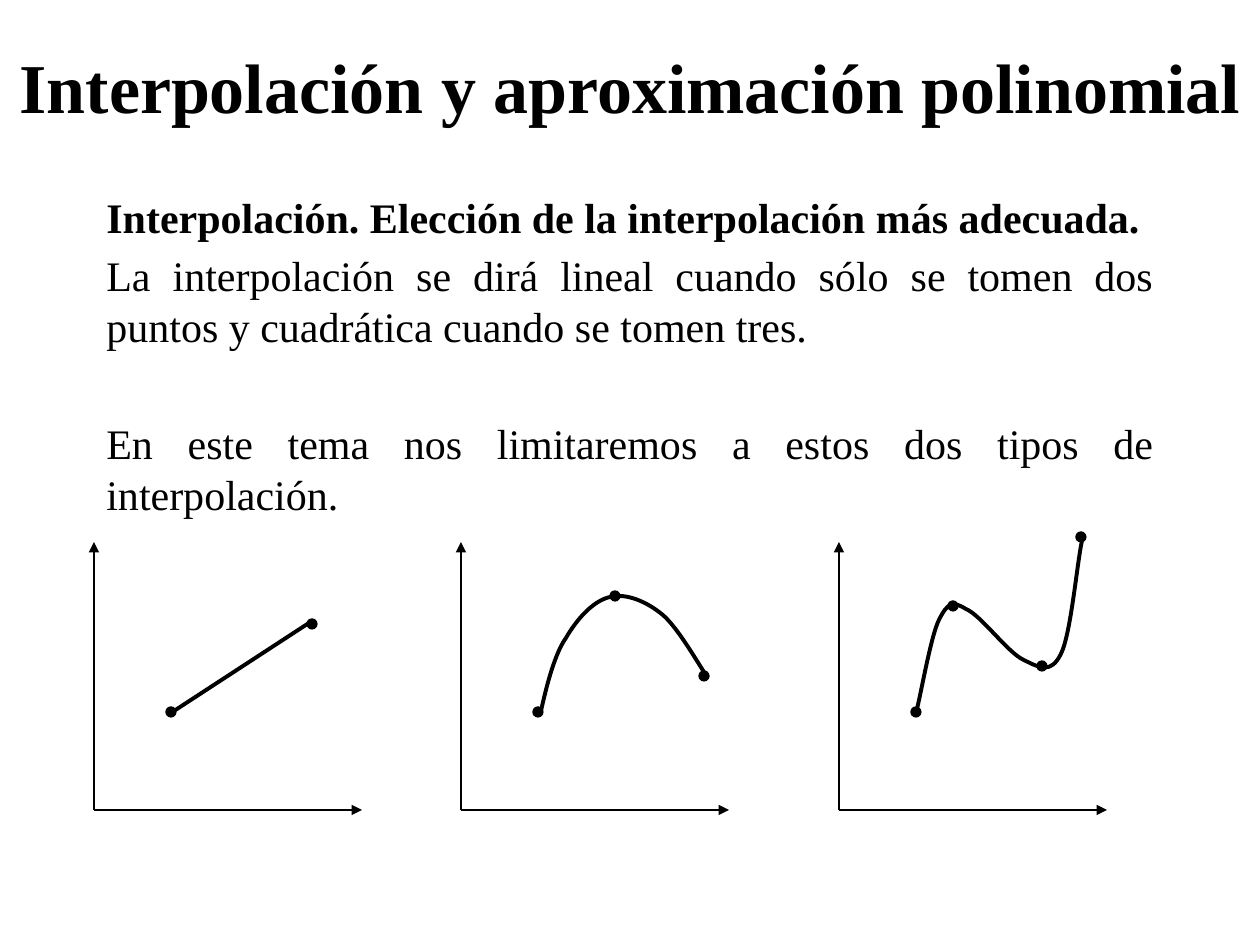
from lxml.etree import SubElement
from pptx import Presentation
from pptx.dml.color import RGBColor
from pptx.enum.shapes import MSO_CONNECTOR, MSO_SHAPE
from pptx.enum.text import MSO_ANCHOR, PP_ALIGN
from pptx.oxml.ns import qn
from pptx.util import Pt

PX = 914400 // 126
BLACK = RGBColor(0, 0, 0)
FONT = "Times New Roman"

prs = Presentation()
prs.slide_width, prs.slide_height = 1260 * PX, 945 * PX
s = prs.slides.add_slide(prs.slide_layouts[6])


def add_line(x1, y1, x2, y2, width, arrow=False):
    line = s.shapes.add_connector(
        MSO_CONNECTOR.STRAIGHT, x1 * PX, y1 * PX, x2 * PX, y2 * PX)
    line.line.color.rgb = BLACK
    line.line.width = Pt(width)
    if arrow:
        SubElement(line.line._get_or_add_ln(), qn("a:tailEnd"), type="triangle")
    SubElement(line._element.spPr, qn("a:effectLst"))


def add_curve(points):
    """Draw a Bezier curve: a start point, then three points per segment."""
    builder = s.shapes.build_freeform(*points[0], scale=PX)
    builder.add_line_segments(points[1:], close=False)
    sp = builder.convert_to_shape()
    sp.shadow.inherit = False
    sp.fill.background()
    sp.line.color.rgb = BLACK
    sp.line.width = Pt(2.25)
    path = sp._element.find(".//" + qn("a:path"))
    steps = path.findall(qn("a:lnTo"))
    for i in range(0, len(steps), 3):
        bezier = SubElement(path, qn("a:cubicBezTo"))
        for step in steps[i:i + 3]:
            bezier.append(step[0])
            path.remove(step)


# Text: paragraphs as (text, bold, space before in points)
title = [("Interpolación y aproximación polinomial", True, 0)]
body = [
    ("Interpolación. Elección de la interpolación más adecuada.", True, 0),
    ("La interpolación se dirá lineal cuando sólo se tomen dos puntos y "
     "cuadrática cuando se tomen tres.", False, 4),
    ("En este tema nos limitaremos a estos dos tipos de interpolación.",
     False, 38),
]
for box, paragraphs, size, spacing, align, anchor in [
    ((0, 6, 1260, 158), title, 40, None, PP_ALIGN.CENTER, MSO_ANCHOR.MIDDLE),
    ((94, 185, 1072, 714), body, 24, Pt(29), PP_ALIGN.JUSTIFY, MSO_ANCHOR.TOP),
]:
    tf = s.shapes.add_textbox(*(v * PX for v in box)).text_frame
    tf.word_wrap = True
    tf.vertical_anchor = anchor
    for i, (text, bold, before) in enumerate(paragraphs):
        p = tf.add_paragraph() if i else tf.paragraphs[0]
        p.text = text
        p.alignment = align
        p.line_spacing = spacing
        p.space_before = Pt(before)
        font = p.runs[0].font
        font.name, font.size, font.bold = FONT, Pt(size), bold
        font.color.rgb = BLACK

# Three graphs: axes with their interpolated points
AXIS_Y, AXIS_LENGTH, DOT = 810, 268, 10
graphs = [
    (94, [(171, 712), (312, 624)]),
    (461, [(538, 712), (615, 596), (704, 676)]),
    (839, [(916, 712), (953, 606), (1042, 666), (1081, 537)]),
]
for axis_x, dots in graphs:
    add_line(axis_x, AXIS_Y, axis_x + AXIS_LENGTH, AXIS_Y, 0.75, arrow=True)
    add_line(axis_x, AXIS_Y, axis_x, AXIS_Y - AXIS_LENGTH, 0.75, arrow=True)
    for x, y in dots:
        dot = s.shapes.add_shape(
            MSO_SHAPE.OVAL, (x - DOT // 2) * PX, (y - DOT // 2) * PX,
            DOT * PX, DOT * PX)
        dot.shadow.inherit = False
        dot.fill.solid()
        dot.fill.fore_color.rgb = BLACK
        dot.line.color.rgb = BLACK
        dot.line.width = Pt(0.75)

# Linear, quadratic and cubic interpolation
add_line(174, 711, 312, 621, 2.25)
add_curve([
    (541, 711), (544, 698), (553, 656), (566, 638),
    (577, 619), (593, 601), (610, 597),
    (626, 593), (646, 601), (663, 615),
    (679, 629), (699, 665), (708, 678),
])
add_curve([
    (917, 709), (921, 694), (931, 636), (939, 620),
    (948, 602), (953, 601), (966, 609),
    (981, 615), (1008, 653), (1024, 660),
    (1040, 668), (1051, 674), (1061, 654),
    (1071, 634), (1077, 564), (1082, 541),
])

prs.save("out.pptx")
